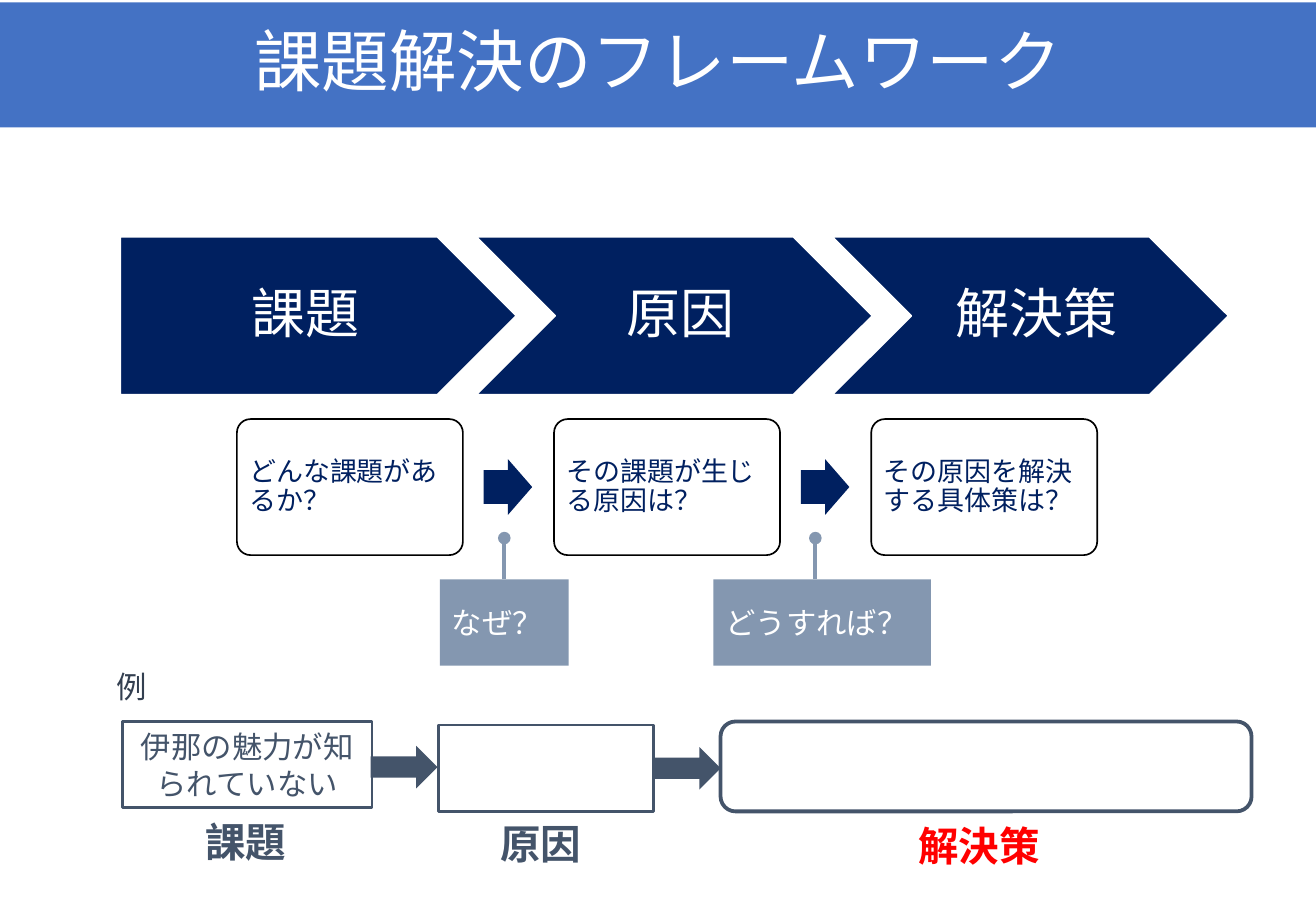
from pptx import Presentation
from pptx.dml.color import RGBColor
from pptx.enum.shapes import MSO_CONNECTOR, MSO_SHAPE
from pptx.enum.text import MSO_ANCHOR, PP_ALIGN
from pptx.oxml.ns import qn
from pptx.util import Emu, Pt
from lxml.etree import SubElement

# Content (lengths in px, 100 px to the inch)
FONT = "Noto Sans CJK JP"
WHITE = RGBColor(0xFF, 0xFF, 0xFF)
BLACK = RGBColor(0, 0, 0)
BLUE = RGBColor(0x44, 0x72, 0xC4)
NAVY = RGBColor(0x00, 0x20, 0x60)
SLATE = RGBColor(0x44, 0x54, 0x6A)
DARK_SLATE = RGBColor(0x33, 0x3F, 0x50)
GREY_BLUE = RGBColor(0x84, 0x97, 0xB0)
RED = RGBColor(0xFF, 0, 0)

TITLE = "課題解決のフレームワーク"
STEPS = [
    ("課題", "どんな課題があるか？"),
    ("原因", "その課題が生じる原因は？"),
    ("解決策", "その原因を解決する具体策は？"),
]
# text, left, width, stem position
CALLOUTS = [("なぜ？", 362, 106, 415), ("どうすれば？", 587, 179, 671)]
EXAMPLE_HEADING = "例"
# text, shape, area, line width
EXAMPLES = [
    ("伊那の魅力が知られていない", MSO_SHAPE.RECTANGLE, (101, 594, 205, 71), 1.5),
    ("", MSO_SHAPE.RECTANGLE, (361, 597, 177, 71), 1.5),
    ("", MSO_SHAPE.ROUNDED_RECTANGLE, (593, 594, 437, 74), 2.25),
]
EXAMPLE_ARROWS = [(305, 614, 55, 35), (538, 615, 55, 35)]
# text, area, colour
EXAMPLE_LABELS = [
    ("課題", (159, 668, 94, 50), SLATE),
    ("原因", (402, 669, 94, 50), SLATE),
    ("解決策", (746, 671, 173, 50), RED),
]

PX = 9144


def px(*lengths):
    return [Emu(length * PX) for length in lengths]


def write(box, text, size, color, align=PP_ALIGN.LEFT, anchor=MSO_ANCHOR.MIDDLE,
          bold=False, spacing=None, margins=(10, 5, 10, 5)):
    frame = box.text_frame
    frame.word_wrap = True
    frame.vertical_anchor = anchor
    (frame.margin_left, frame.margin_top,
     frame.margin_right, frame.margin_bottom) = px(*margins)
    para = frame.paragraphs[0]
    para.alignment = align
    if spacing:
        para.line_spacing = spacing
    span = para.add_run()
    span.text = text
    span.font.name = FONT
    span.font.size = Pt(size)
    span.font.bold = bold
    span.font.color.rgb = color
    SubElement(span.font._element, qn("a:ea")).set("typeface", FONT)


def add_box(page, shape, area, fill=None, line=None, width=1):
    box = page.shapes.add_shape(shape, *px(*area))
    box.shadow.inherit = False
    if fill is None:
        box.fill.background()
    else:
        box.fill.solid()
        box.fill.fore_color.rgb = fill
    if line is None:
        box.line.fill.background()
    else:
        box.line.color.rgb = line
        box.line.width = Pt(width)
    return box


def add_stem(page, callout, left, width, stem_x):
    stem = page.shapes.add_connector(
        MSO_CONNECTOR.STRAIGHT, *px(stem_x, 477, stem_x, 443))
    if stem_x * 2 == left * 2 + width:
        stem.begin_connect(callout, 0)
    stem.line.color.rgb = GREY_BLUE
    stem.line.width = Pt(2.5)
    SubElement(stem.line._get_or_add_ln(), qn("a:tailEnd")).set("type", "oval")
    SubElement(stem._element.spPr, qn("a:effectLst"))


def main():
    deck = Presentation()
    deck.slide_width, deck.slide_height = px(1083, 750)
    page = deck.slides.add_slide(deck.slide_layouts[5])

    # Title band
    title = page.shapes.title
    title.left, title.top, title.width, title.height = px(0, 2, 1083, 103)
    title.fill.solid()
    title.fill.fore_color.rgb = BLUE
    write(title, TITLE, 40, WHITE, PP_ALIGN.CENTER, spacing=0.9)

    # Example row
    for text, shape, area, width in EXAMPLES:
        box = add_box(page, shape, area, line=SLATE, width=width)
        if text:
            write(box, text, 18, SLATE, PP_ALIGN.CENTER)
    for area in EXAMPLE_ARROWS:
        add_box(page, MSO_SHAPE.RIGHT_ARROW, area, fill=SLATE)
    for text, area, color in EXAMPLE_LABELS:
        label = page.shapes.add_textbox(*px(*area))
        write(label, text, 24, color, anchor=MSO_ANCHOR.TOP, bold=True)
    heading = page.shapes.add_textbox(*px(86, 545, 42, 40))
    write(heading, EXAMPLE_HEADING, 18, DARK_SLATE)

    # Chevrons, with a question under each and arrows between the questions
    for index, (name, question) in enumerate(STEPS):
        shape = MSO_SHAPE.CHEVRON if index else MSO_SHAPE.PENTAGON
        chevron = add_box(page, shape, (99 + 293 * index, 195, 326, 130), NAVY, WHITE)
        write(chevron, name, 32, WHITE, PP_ALIGN.CENTER, spacing=0.9,
              margins=(16, 5, 5, 5))

        left = 195 + 261 * index
        card = add_box(page, MSO_SHAPE.ROUNDED_RECTANGLE, (left, 345, 186, 112),
                       WHITE, BLACK)
        card.adjustments[0] = 0.1
        write(card, question, 16, NAVY, spacing=0.9, margins=(7, 7, 7, 7))
        if index < len(STEPS) - 1:
            arrow = add_box(page, MSO_SHAPE.RIGHT_ARROW, (left + 203, 378, 40, 46), NAVY)
            arrow.adjustments[0] = 0.6

    # Callouts
    for text, left, width, stem_x in CALLOUTS:
        callout = add_box(page, MSO_SHAPE.RECTANGLE, (left, 477, width, 71), GREY_BLUE)
        write(callout, text, 18, WHITE)
        add_stem(page, callout, left, width, stem_x)

    deck.save("out.pptx")


if __name__ == "__main__":
    main()
